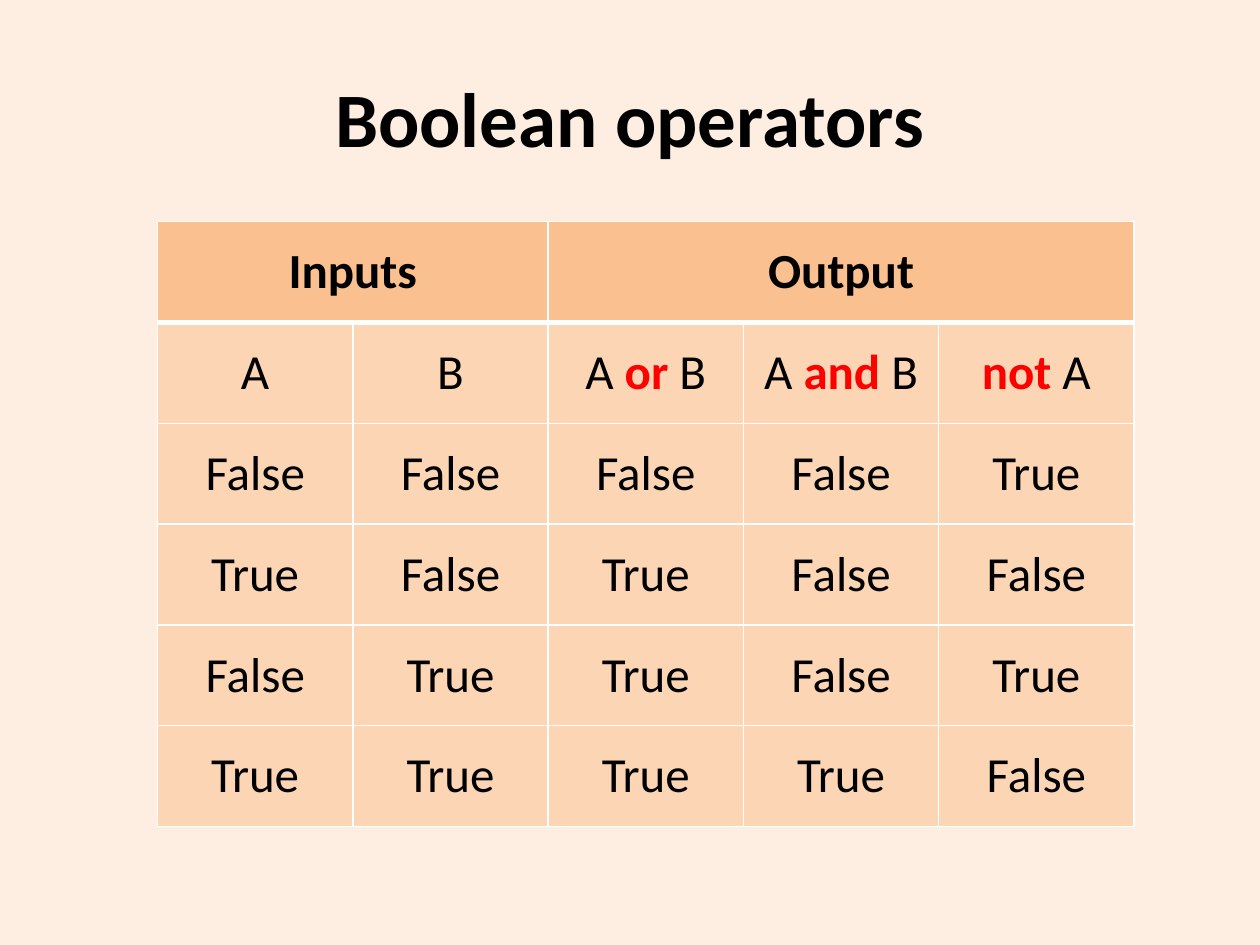
from itertools import product

from pptx import Presentation
from pptx.dml.color import RGBColor
from pptx.enum.text import MSO_ANCHOR, PP_ALIGN
from pptx.oxml import parse_xml
from pptx.oxml.ns import nsdecls
from pptx.util import Inches, Pt

COLORS = {
    "background": "FEEEE1",
    "header": "FAC090",
    "body": "FCD5B5",
    "border": "FFFFFF",
    "text": "000000",
    "operator": "FF0000",
}
FONT = "Calibri"
OPERATORS = {"or", "and", "not"}
HEADINGS = ["A", "B", "A or B", "A and B", "not A"]
COLUMN_WIDTH, ROW_HEIGHT = 1.55, 0.8


def color(name):
    return RGBColor.from_string(COLORS[name])


def style_paragraph(para, size, bold):
    para.alignment = PP_ALIGN.CENTER
    para.font.name = FONT
    para.font.size = Pt(size)
    para.font.bold = bold
    para.font.color.rgb = color("text")


def add_title(page, text):
    title = page.shapes.title
    title.left, title.top = Inches(0.5), Inches(0.3)
    title.width, title.height = Inches(9), Inches(1.25)
    title.text_frame.text = text
    title.text_frame.vertical_anchor = MSO_ANCHOR.MIDDLE
    style_paragraph(title.text_frame.paragraphs[0], 44, True)


def set_borders(cell, bottom):
    widths = {"lnL": 1, "lnR": 1, "lnT": 1, "lnB": bottom}
    properties = cell._tc.get_or_add_tcPr()
    for position, (side, width) in enumerate(widths.items()):
        properties.insert(position, parse_xml(
            f'<a:{side} {nsdecls("a")} w="{Pt(width)}"><a:solidFill>'
            f'<a:srgbClr val="{COLORS["border"]}"/></a:solidFill></a:{side}>'))


def style_cell(cell, fill, bottom=1):
    cell.fill.solid()
    cell.fill.fore_color.rgb = color(fill)
    cell.vertical_anchor = MSO_ANCHOR.MIDDLE
    set_borders(cell, bottom)


def write_cell(cell, text, bold=False):
    """Write a cell, with the operators in bold red."""
    para = cell.text_frame.paragraphs[0]
    style_paragraph(para, 28, bold)
    before, operator, after = text, "", ""
    for word in OPERATORS.intersection(text.split()):
        before, operator, after = text.partition(word)
    for part in filter(None, (before, operator, after)):
        span = para.add_run()
        span.text = part
        if part in OPERATORS:
            span.font.bold = True
            span.font.color.rgb = color("operator")


def truth_rows():
    """Every pair of inputs, A changing fastest, with its outputs."""
    return [[str(value) for value in (a, b, a or b, a and b, not a)]
            for b, a in product((False, True), repeat=2)]


def add_truth_table(page):
    rows = [HEADINGS] + truth_rows()
    row_count, column_count = len(rows) + 1, len(HEADINGS)
    table = page.shapes.add_table(
        row_count, column_count, Inches(1.25), Inches(1.76),
        Inches(COLUMN_WIDTH * column_count),
        Inches(ROW_HEIGHT * row_count)).table
    table.horz_banding = False

    # Header groups
    for column in range(column_count):
        style_cell(table.cell(0, column), "header", bottom=3)
    for text, first, last in (("Inputs", 0, 1), ("Output", 2, 4)):
        table.cell(0, first).merge(table.cell(0, last))
        write_cell(table.cell(0, first), text, bold=True)

    # Headings and truth values
    for row, texts in enumerate(rows, start=1):
        for column, text in enumerate(texts):
            cell = table.cell(row, column)
            style_cell(cell, "body")
            write_cell(cell, text)
            if row > 1:
                cell.margin_left = cell.margin_right = Inches(0.06)
                cell.margin_top = cell.margin_bottom = Inches(0.06)


def main():
    deck = Presentation()
    deck.slide_width, deck.slide_height = Inches(10), Inches(7.5)
    page = deck.slides.add_slide(deck.slide_layouts[5])
    page.background.fill.solid()
    page.background.fill.fore_color.rgb = color("background")
    add_title(page, "Boolean operators")
    add_truth_table(page)
    deck.save("out.pptx")


if __name__ == "__main__":
    main()
